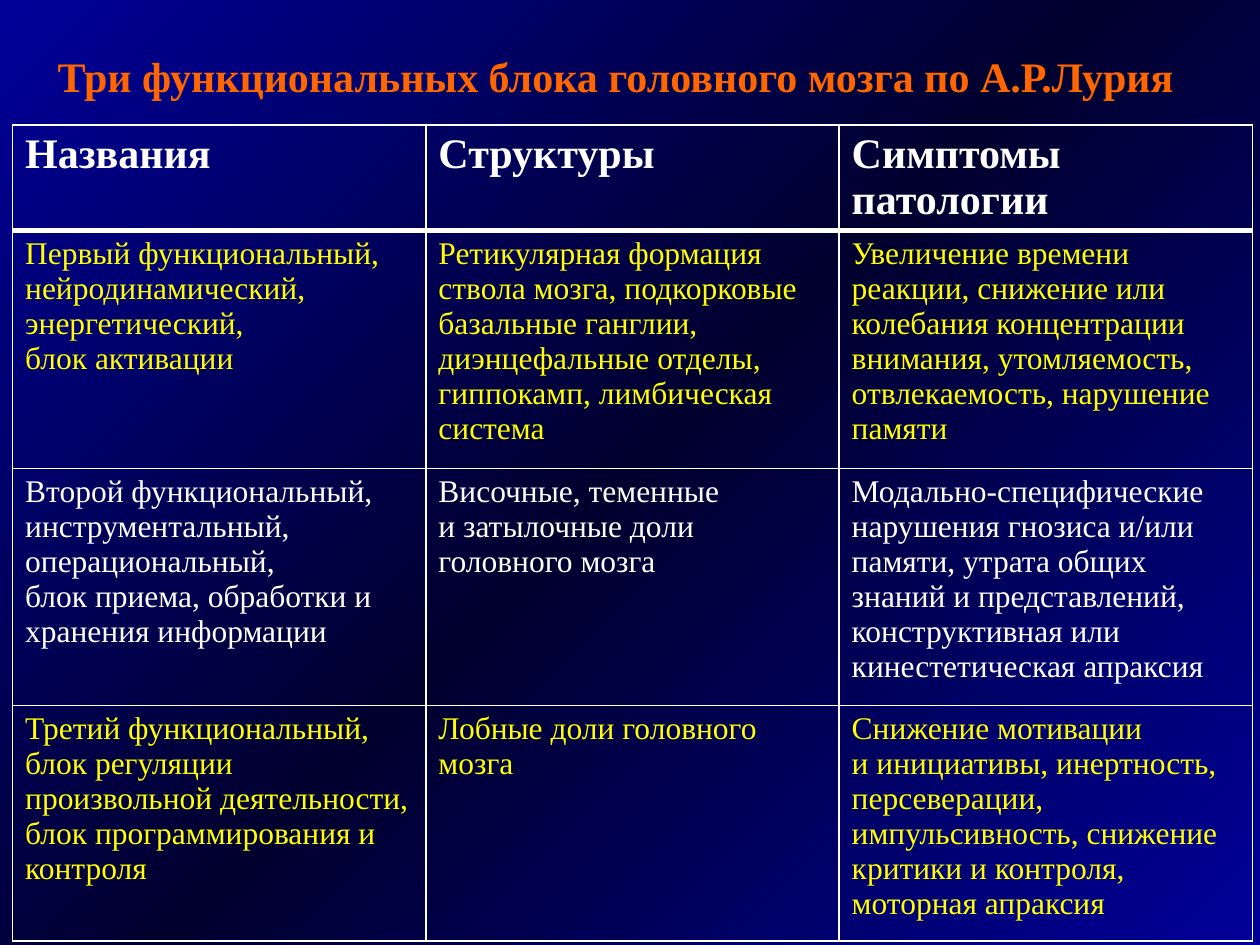
import copy

import pptx
import pptx.dml.color
import pptx.enum.text
import pptx.oxml
import pptx.oxml.ns
import pptx.util

COLORS = {"blue": "000099", "night": "00002E", "orange": "FF6600",
          "white": "FFFFFF", "yellow": "FFFF00"}
FONT = "Times New Roman"
COLUMN_WIDTH = 3.28
ROW_HEIGHTS = [0.72, 1.89, 1.88, 1.87]

HEADINGS = ["Названия", "Структуры", "Симптомы патологии"]
BLOCKS = [
    ["Первый функциональный, нейродинамический,\nэнергетический,\nблок активации",
     "Ретикулярная формация ствола мозга, подкорковые\n"
     "базальные ганглии, диэнцефальные отделы, гиппокамп, лимбическая система",
     "Увеличение времени реакции, снижение или колебания концентрации внимания, "
     "утомляемость, отвлекаемость, нарушение\nпамяти"],
    ["Второй функциональный, инструментальный,\nоперациональный,\n"
     "блок приема, обработки и хранения информации",
     "Височные, теменные\nи затылочные доли\nголовного мозга",
     "Модально-специфические нарушения гнозиса и/или памяти, утрата общих знаний "
     "и представлений,\nконструктивная или\nкинестетическая апраксия"],
    ["Третий функциональный,\nблок регуляции произвольной деятельности, "
     "блок программирования и контроля",
     "Лобные доли головного мозга",
     "Снижение мотивации\nи инициативы, инертность, персеверации, импульсивность, "
     "снижение критики и контроля, моторная апраксия"],
]


def rgb(color):
    return pptx.dml.color.RGBColor.from_string(COLORS[color])


def format_text(frame, size, color, bold):
    for paragraph in frame.paragraphs:
        for run in paragraph.runs:
            run.font.name = FONT
            run.font.size = pptx.util.Pt(size)
            run.font.bold = bold
            run.font.color.rgb = rgb(color)


def paint_background(slide):
    fill = slide.background.fill
    fill.gradient()
    fill.gradient_angle = 315
    # A third stop makes the dark band in the middle
    stops = next(slide.background._cSld.iter(pptx.oxml.ns.qn("a:gsLst")))
    stops.insert(1, copy.deepcopy(stops[0]))
    for stop, position, color in zip(fill.gradient_stops, (0, 0.5, 1),
                                     ("blue", "night", "blue")):
        stop.position = position
        stop.color.rgb = rgb(color)


def write_title(slide, text):
    title = slide.shapes.title
    title.left, title.top, title.width, title.height = map(
        pptx.util.Inches, (0.2, 0, 9.37, 0.94))
    frame = title.text_frame
    frame.text = text
    frame.word_wrap = True
    frame.auto_size = pptx.enum.text.MSO_AUTO_SIZE.NONE
    frame.vertical_anchor = pptx.enum.text.MSO_ANCHOR.MIDDLE
    frame.paragraphs[0].alignment = pptx.enum.text.PP_ALIGN.CENTER
    frame.paragraphs[0].line_spacing = pptx.util.Pt(48)
    format_text(frame, 24, "orange", True)


def set_borders(cell, top, bottom):
    properties = cell._tc.get_or_add_tcPr()
    for side, width in (("L", 1), ("R", 1), ("T", top), ("B", bottom)):
        properties.append(pptx.oxml.parse_xml(
            f'<a:ln{side} {pptx.oxml.ns.nsdecls("a")} w="{pptx.util.Pt(width)}">'
            f'<a:solidFill><a:srgbClr val="{COLORS["white"]}"/></a:solidFill>'
            f'</a:ln{side}>'))


def add_blocks_table(slide):
    rows = [HEADINGS] + BLOCKS
    table = slide.shapes.add_table(
        len(rows), len(HEADINGS),
        *map(pptx.util.Inches, (0.1, 0.99, COLUMN_WIDTH * len(HEADINGS),
                                sum(ROW_HEIGHTS)))).table
    table.first_row = table.horz_banding = False
    for column in table.columns:
        column.width = pptx.util.Inches(COLUMN_WIDTH)
    for r, texts in enumerate(rows):
        table.rows[r].height = pptx.util.Inches(ROW_HEIGHTS[r])
        heading = r == 0
        color = "yellow" if r % 2 else "white"
        for c, text in enumerate(texts):
            cell = table.cell(r, c)
            cell.text_frame.text = text
            format_text(cell.text_frame, 24 if heading else 18, color, heading)
            # The heading row is closed by a thick rule
            set_borders(cell, top=3 if r == 1 else 1, bottom=3 if heading else 1)
            cell.fill.background()


def main():
    deck = pptx.Presentation()
    deck.slide_width, deck.slide_height = map(pptx.util.Inches, (10, 7.5))
    slide = deck.slides.add_slide(deck.slide_layouts[5])
    paint_background(slide)
    write_title(slide, "Три функциональных блока головного мозга по А.Р.Лурия")
    add_blocks_table(slide)
    deck.save("out.pptx")


if __name__ == "__main__":
    main()
